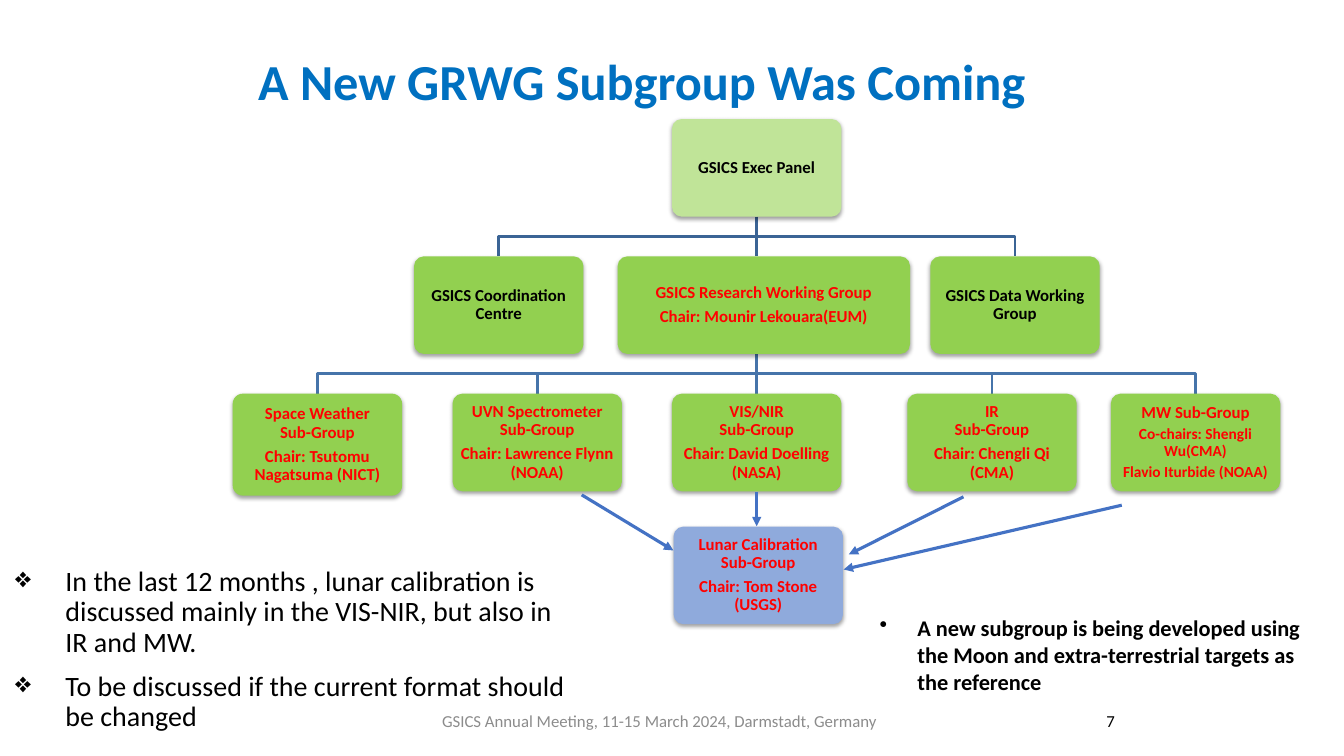
from copy import deepcopy

from lxml import etree
from pptx import Presentation
from pptx import util as u
from pptx.dml.color import RGBColor
from pptx.enum import shapes, text
from pptx.oxml import ns

COLORS = {
    "title": "0070C0", "black": "000000", "red": "FF0000", "footer": "8C8C8C",
    "panel": "C0E498", "group": "92D050", "lunar": "8FAADC",
    "upper_line": "3B6495", "lower_line": "4674AA", "arrow": "4472C4",
}
BOX_WIDTH, BOX_HEIGHT = 4.27, 2.46
LEVEL_TOPS = [3.0, 6.46, 9.92, 13.27]
TRUNK_X = 19.07


def rgb(name):
    return RGBColor.from_string(COLORS[name])


def write(frame, paragraphs, size=12, color="black", bold=False, align="CENTER",
          anchor="MIDDLE", inset=(0.25, 0.13), line_spacing=None, gap=0,
          later_size=None, bullet=None, indent=0):
    """Fill a text frame; gap and later_size apply after the first paragraph."""
    frame.word_wrap = True
    frame.auto_size = text.MSO_AUTO_SIZE.NONE
    frame.vertical_anchor = text.MSO_ANCHOR[anchor]
    frame.margin_left = frame.margin_right = u.Cm(inset[0])
    frame.margin_top = frame.margin_bottom = u.Cm(inset[1])
    for index, content in enumerate(paragraphs):
        paragraph = frame.add_paragraph() if index else frame.paragraphs[0]
        if bullet:
            properties = paragraph._p.get_or_add_pPr()
            properties.set("marL", str(u.Cm(indent)))
            properties.set("indent", str(-u.Cm(indent)))
            etree.SubElement(properties, ns.qn("a:buChar")).set("char", bullet)
        paragraph.text = content
        paragraph.alignment = text.PP_ALIGN[align]
        paragraph.line_spacing = line_spacing
        paragraph.space_before = u.Pt(gap if index else 0)
        for run in paragraph.runs:
            run.font.name = "Calibri"
            run.font.size = u.Pt(later_size if index and later_size else size)
            run.font.bold = bold
            run.font.color.rgb = rgb(color)
        for line_break in paragraph._p.findall(ns.qn("a:br")):
            line_break.append(deepcopy(paragraph.runs[0]._r.rPr))


presentation = Presentation()
presentation.slide_width, presentation.slide_height = u.Cm(33.87), u.Cm(19.05)
slide = presentation.slides.add_slide(presentation.slide_layouts[5])

title = slide.shapes.title
title.left, title.top, title.width, title.height = map(u.Cm, (5.51, 0.61, 21.34, 2.84))
write(title.text_frame, ["A New GRWG Subgroup Was Coming"], size=36, color="title", bold=True)

# Branches from a parent down to its children
branches = [
    (0, "upper_line", [12.57, TRUNK_X, 25.58]),
    (1, "lower_line", [8.0, 13.54, TRUNK_X, 25.0, 30.13]),
]
for level, color, child_centers in branches:
    start, end = LEVEL_TOPS[level] + BOX_HEIGHT, LEVEL_TOPS[level + 1]
    middle = (start + end) / 2
    for center in child_centers:
        if center == TRUNK_X:
            points = [(TRUNK_X, end)]
        else:
            points = [(TRUNK_X, middle), (center, middle), (center, end)]
        builder = slide.shapes.build_freeform(u.Cm(TRUNK_X), u.Cm(start))
        builder.add_line_segments([(u.Cm(x), u.Cm(y)) for x, y in points], close=False)
        branch = builder.convert_to_shape()
        branch.shadow.inherit = False
        branch.fill.background()
        branch.line.color.rgb = rgb(color)
        branch.line.width = u.Pt(2)

# Boxes: level, centre, width, height, fill, text colour, paragraphs
boxes = [
    (0, TRUNK_X, BOX_WIDTH, BOX_HEIGHT, "panel", "black", ["GSICS Exec Panel"]),
    (1, 12.57, BOX_WIDTH, BOX_HEIGHT, "group", "black", ["GSICS Coordination Centre"]),
    (1, 19.25, 7.37, BOX_HEIGHT, "group", "red",
     ["GSICS Research Working Group", "Chair: Mounir Lekouara(EUM)"]),
    (1, 25.58, BOX_WIDTH, BOX_HEIGHT, "group", "black", ["GSICS Data Working Group"]),
    (2, 8.0, BOX_WIDTH, 2.57, "group", "red",
     ["Space Weather\nSub-Group", "Chair: Tsutomu Nagatsuma (NICT)"]),
    (2, 13.54, BOX_WIDTH, BOX_HEIGHT, "group", "red",
     ["UVN Spectrometer\nSub-Group", "Chair: Lawrence Flynn (NOAA)"]),
    (2, TRUNK_X, BOX_WIDTH, BOX_HEIGHT, "group", "red",
     ["VIS/NIR\nSub-Group", "Chair: David Doelling (NASA)"]),
    (2, 25.0, BOX_WIDTH, BOX_HEIGHT, "group", "red",
     ["IR\nSub-Group", "Chair: Chengli Qi (CMA)"]),
    (2, 30.13, BOX_WIDTH, BOX_HEIGHT, "group", "red",
     ["MW Sub-Group", "Co-chairs: Shengli Wu(CMA)", "Flavio Iturbide (NOAA)"]),
    (3, 19.11, BOX_WIDTH, BOX_HEIGHT, "lunar", "red",
     ["Lunar Calibration\nSub-Group", "Chair: Tom Stone (USGS)"]),
]
for level, center, width, height, fill, color, paragraphs in boxes:
    box = slide.shapes.add_shape(
        shapes.MSO_SHAPE.ROUNDED_RECTANGLE, u.Cm(center - width / 2),
        u.Cm(LEVEL_TOPS[level]), u.Cm(width), u.Cm(height))
    box.adjustments[0] = 0.1
    box.fill.solid()
    box.fill.fore_color.rgb = rgb(fill)
    box.line.fill.background()
    box.shadow.inherit = False
    effects = box._element.spPr.find(ns.qn("a:effectLst"))
    shadow = etree.SubElement(effects, ns.qn("a:outerShdw"), blurRad=str(u.Pt(3.1)),
                              dist=str(u.Pt(1.6)), dir="5400000", rotWithShape="0")
    shade = etree.SubElement(shadow, ns.qn("a:srgbClr"), val=COLORS["black"])
    etree.SubElement(shade, ns.qn("a:alpha"), val="37000")
    three_lines = len(paragraphs) == 3
    write(box.text_frame, paragraphs, color=color, bold=True, inset=(0.12, 0.12),
          line_spacing=0.9, gap=3.1 if three_lines else 4.2,
          later_size=11 if three_lines else None)

# Arrows into the lunar calibration box
arrows = [
    (TRUNK_X, 12.4, TRUNK_X, 13.26),
    (24.28, 12.52, 21.39, 13.97),
    (28.27, 12.73, 21.26, 14.35),
    (14.66, 12.47, 16.97, 13.87),
]
for ends in arrows:
    arrow = slide.shapes.add_connector(shapes.MSO_CONNECTOR.STRAIGHT, *map(u.Cm, ends))
    arrow.line.color.rgb = rgb("arrow")
    arrow.line.width = u.Pt(2.25)
    etree.SubElement(arrow.line._get_or_add_ln(), ns.qn("a:tailEnd"), type="triangle")
    etree.SubElement(arrow._element.spPr, ns.qn("a:effectLst"))

# Notes beside the chart, footer and slide number
text_boxes = [
    ((0.13, 14.17, 14.53, 3.89),
     ["In the last 12 months , lunar calibration is discussed mainly in the VIS-NIR, "
      "but also in IR and MW.",
      "To be discussed if the current format should be changed"],
     dict(size=20, align="LEFT", anchor="TOP", line_spacing=0.9, gap=10,
          bullet="❖", indent=1.27)),
    ((21.92, 15.34, 11.53, 2.24),
     ["A new subgroup is being developed using the Moon and extra-terrestrial targets "
      "as the reference"],
     dict(size=16, bold=True, align="LEFT", anchor="TOP", bullet="•", indent=0.95)),
    ((10.59, 17.65, 12.07, 1.02),
     ["GSICS Annual Meeting, 11-15 March 2024, Darmstadt, Germany"], dict(color="footer")),
    ((22.43, 17.65, 5.92, 1.02), ["7"], dict(align="RIGHT")),
]
for place, paragraphs, style in text_boxes:
    text_box = slide.shapes.add_textbox(*map(u.Cm, place))
    write(text_box.text_frame, paragraphs, **style)

presentation.save("out.pptx")
